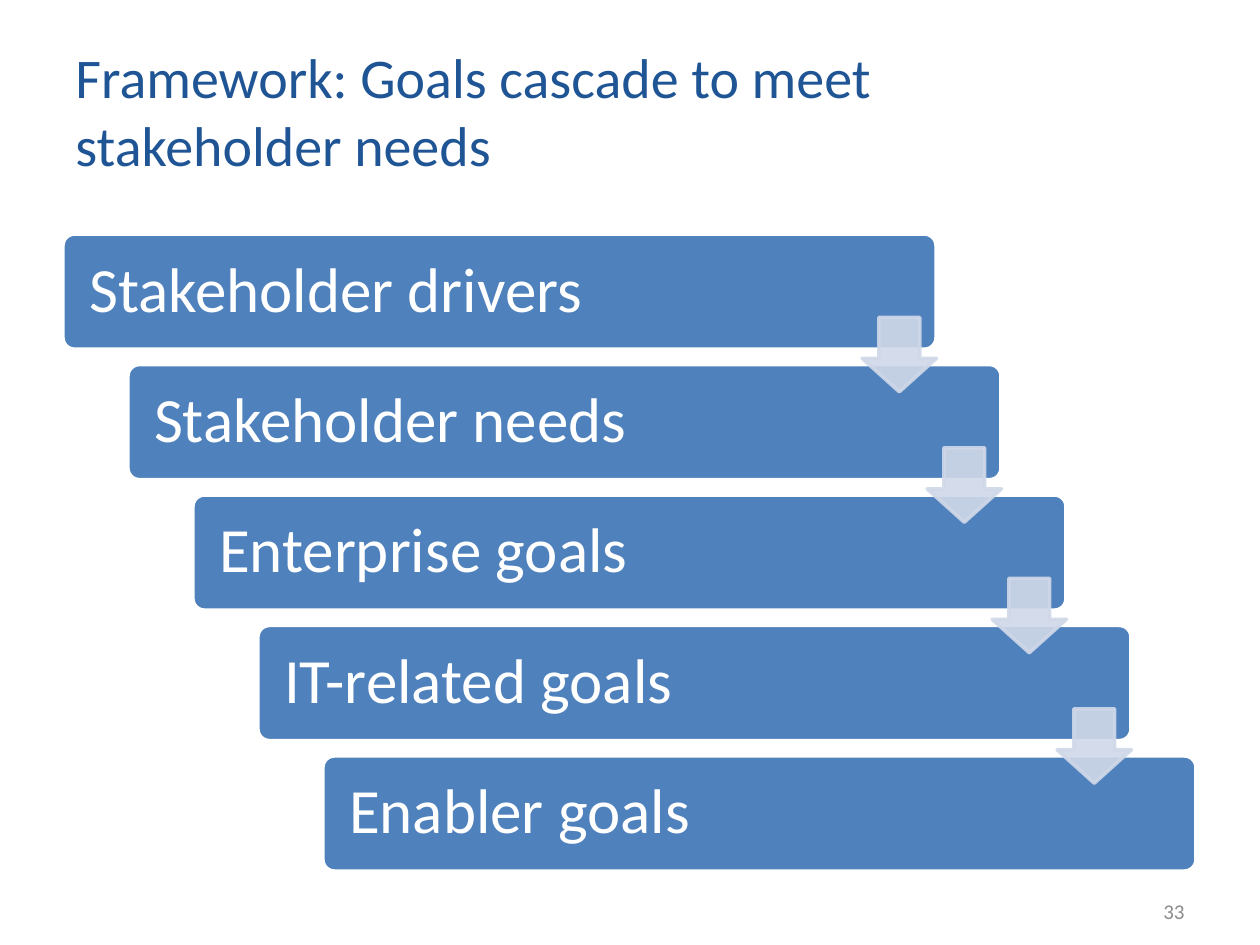
import pptx
import pptx.dml.color
import pptx.enum.shapes
import pptx.enum.text
import pptx.oxml.ns
import pptx.util
import lxml.etree

Cm = pptx.util.Cm
Pt = pptx.util.Pt
SHAPES = pptx.enum.shapes.MSO_SHAPE
ALIGN = pptx.enum.text.PP_ALIGN
COLORS = {
    "title": "205595",
    "bar": "4F81BD",
    "white": "FFFFFF",
    "arrow": "D0D8E8",
    "number": "8B8B8B",
}
GOALS = [
    "Stakeholder drivers",
    "Stakeholder needs",
    "Enterprise goals",
    "IT-related goals",
    "Enabler goals",
]
STEP_X, STEP_Y = 1.31, 2.63


def rgb(name):
    return pptx.dml.color.RGBColor.from_string(COLORS[name])


def write(frame, text, size, color, font="Calibri", align=ALIGN.LEFT,
          spacing=1.0, insets=(0.25, 0.13, 0.25, 0.13)):
    frame.word_wrap = True
    frame.auto_size = pptx.enum.text.MSO_AUTO_SIZE.NONE
    frame.vertical_anchor = pptx.enum.text.MSO_ANCHOR.MIDDLE
    left, top, right, bottom = (Cm(inset) for inset in insets)
    frame.margin_left, frame.margin_top = left, top
    frame.margin_right, frame.margin_bottom = right, bottom
    paragraph = frame.paragraphs[0]
    paragraph.alignment = align
    paragraph.line_spacing = spacing
    run = paragraph.add_run()
    run.text = text
    run.font.name = font
    run.font.size = Pt(size)
    run.font.color.rgb = rgb(color)


class CascadeSlide:
    def __init__(self, deck):
        self.slide = deck.slides.add_slide(deck.slide_layouts[5])

    def title(self, text, left, top, width, height):
        heading = self.slide.shapes.title
        heading.left, heading.top = Cm(left), Cm(top)
        heading.width, heading.height = Cm(width), Cm(height)
        write(heading.text_frame, text, 32, "title")

    def block(self, kind, box, fill, line, adjustments):
        block = self.slide.shapes.add_shape(kind, *(Cm(side) for side in box))
        block.shadow.inherit = False
        block.fill.solid()
        block.fill.fore_color.rgb = rgb(fill)
        block.line.color.rgb = rgb(line)
        block.line.width = Pt(2)
        for index, value in enumerate(adjustments):
            block.adjustments[index] = value
        return block

    def bar(self, text, left, top):
        bar = self.block(SHAPES.ROUNDED_RECTANGLE, (left, top, 17.6, 2.32),
                         "bar", "white", [0.1])
        write(bar.text_frame, text, 36, "white", spacing=0.9,
              insets=(0.46, 0.46, 0.38, 0.46))

    def arrow(self, left, top):
        arrow = self.block(SHAPES.DOWN_ARROW, (left, top, 1.5, 1.5),
                           "arrow", "arrow", [0.55, 0.45])
        properties = arrow.fill._xPr
        for color in properties.iter(pptx.oxml.ns.qn("a:srgbClr")):
            alpha = lxml.etree.SubElement(color, pptx.oxml.ns.qn("a:alpha"))
            alpha.set("val", "90000")

    def number(self, text, left, top, width, height):
        number = self.slide.shapes.add_textbox(
            Cm(left), Cm(top), Cm(width), Cm(height))
        write(number.text_frame, text, 12, "number", align=ALIGN.RIGHT)


def main():
    deck = pptx.Presentation()
    deck.slide_width, deck.slide_height = Cm(25.4), Cm(19.05)
    cascade = CascadeSlide(deck)
    cascade.title("Framework: Goals cascade to meet stakeholder needs",
                  1.27, 0.76, 20.42, 2.92)
    for level, goal in enumerate(GOALS):
        cascade.bar(goal, 1.27 + level * STEP_X, 4.72 + level * STEP_Y)
    for level in range(len(GOALS) - 1):
        cascade.arrow(17.38 + level * STEP_X, 6.4 + level * STEP_Y)
    cascade.number("33", 18.21, 17.86, 5.92, 1.02)
    deck.save("out.pptx")


if __name__ == "__main__":
    main()
